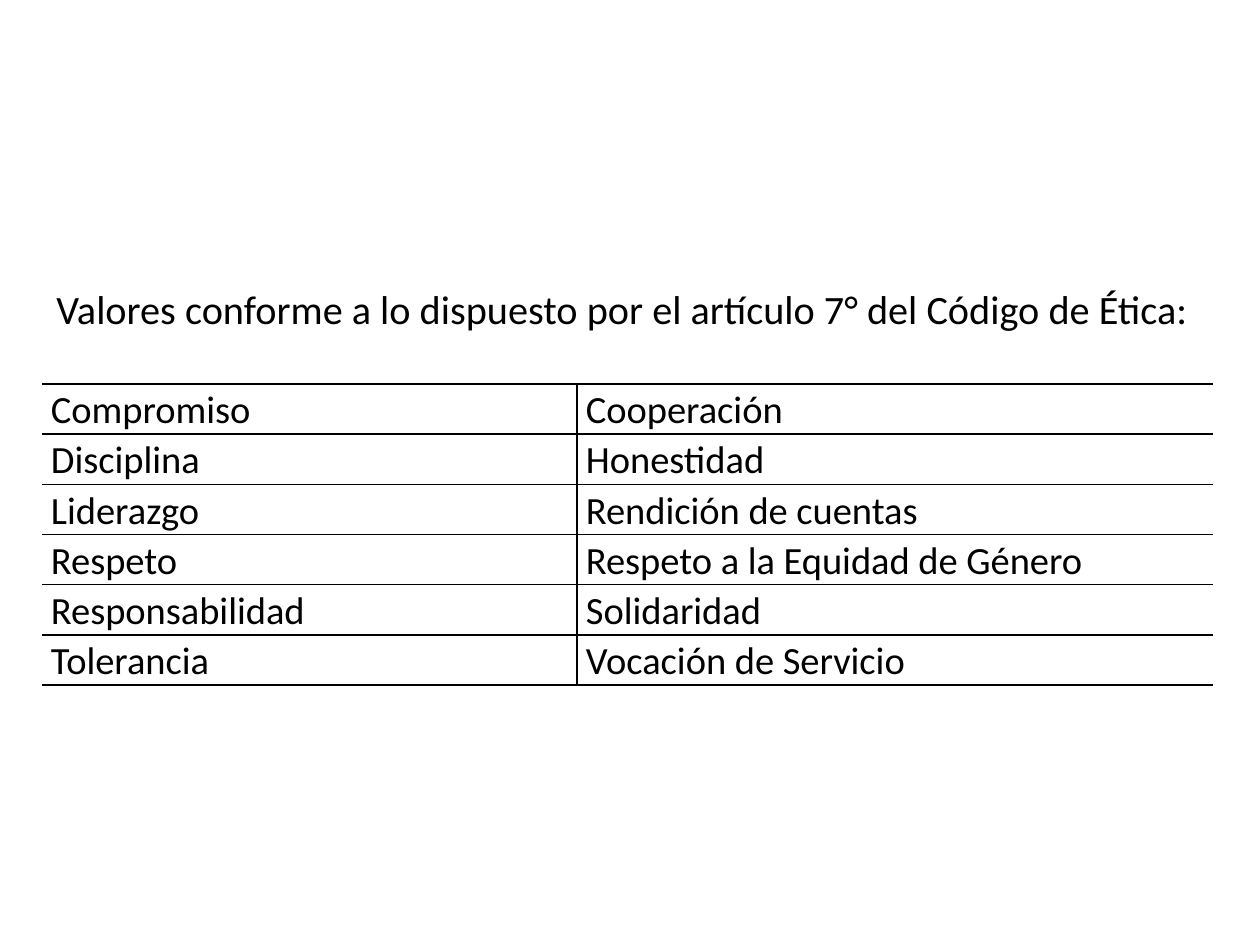
from lxml import etree
from pptx import Presentation
from pptx import util as u
from pptx.dml.color import RGBColor
from pptx.enum import shapes, text
from pptx.oxml.ns import qn

PX = 914400 // 126
BLACK, WHITE = "000000", "FFFFFF"


def paint(fill, color):
    fill.solid()
    fill.fore_color.rgb = RGBColor.from_string(color)


def write(paragraph, words, size):
    run = paragraph.add_run()
    run.text = words
    for key, value in {"name": "Calibri", "size": u.Pt(size), "bold": False}.items():
        setattr(run.font, key, value)
    paint(run.font.fill, BLACK)


deck = Presentation()
deck.slide_width, deck.slide_height = u.Inches(10), u.Inches(7.5)
slide = deck.slides.add_slide(deck.slide_layouts[6])

heading = slide.shapes.add_shape(
    shapes.MSO_SHAPE.RECTANGLE, 44 * PX, 234 * PX, 1171 * PX, 149 * PX)
heading.shadow.inherit = False
paint(heading.fill, WHITE)
heading.line.fill.background()
heading.text_frame.word_wrap = True
heading.text_frame.vertical_anchor = text.MSO_ANCHOR.MIDDLE
heading_line = heading.text_frame.paragraphs[0]
heading_line.alignment = text.PP_ALIGN.JUSTIFY
write(heading_line, "Valores conforme a lo dispuesto por el artículo 7° del Código de Ética:", 23)

ethics_values = [
    ("Compromiso", "Cooperación"),
    ("Disciplina", "Honestidad"),
    ("Liderazgo", "Rendición de cuentas"),
    ("Respeto", "Respeto a la Equidad de Género"),
    ("Responsabilidad", "Solidaridad"),
    ("Tolerancia", "Vocación de Servicio"),
]
column_widths = (535, 636)
row_height = 50
values_table = slide.shapes.add_table(
    len(ethics_values), 2, 42 * PX, 384 * PX,
    sum(column_widths) * PX, row_height * len(ethics_values) * PX).table
values_table.first_row = values_table.horz_banding = False
for column, width in zip(values_table.columns, column_widths):
    column.width = width * PX

cell_format = {"margin_left": 9 * PX, "margin_right": 9 * PX,
               "margin_top": 0, "margin_bottom": 0}
for row, pair in enumerate(ethics_values):
    values_table.rows[row].height = row_height * PX
    for side, value in enumerate(pair):
        cell = values_table.cell(row, side)
        for key, setting in cell_format.items():
            setattr(cell, key, setting)
        cell_line = cell.text_frame.paragraphs[0]
        cell_line.line_spacing = 1.07
        write(cell_line, value, 22)
        outer_edge = ("lnL", "lnR")[side]
        properties = cell._tc.get_or_add_tcPr()
        for edge in ("lnL", "lnR", "lnT", "lnB"):
            border = etree.SubElement(properties, qn(f"a:{edge}"), w=str(u.Pt(1)))
            if edge == outer_edge:
                etree.SubElement(border, qn("a:noFill"))
            else:
                ink = etree.SubElement(border, qn("a:solidFill"))
                etree.SubElement(ink, qn("a:srgbClr"), val=BLACK)
        paint(cell.fill, WHITE)

deck.save("out.pptx")
